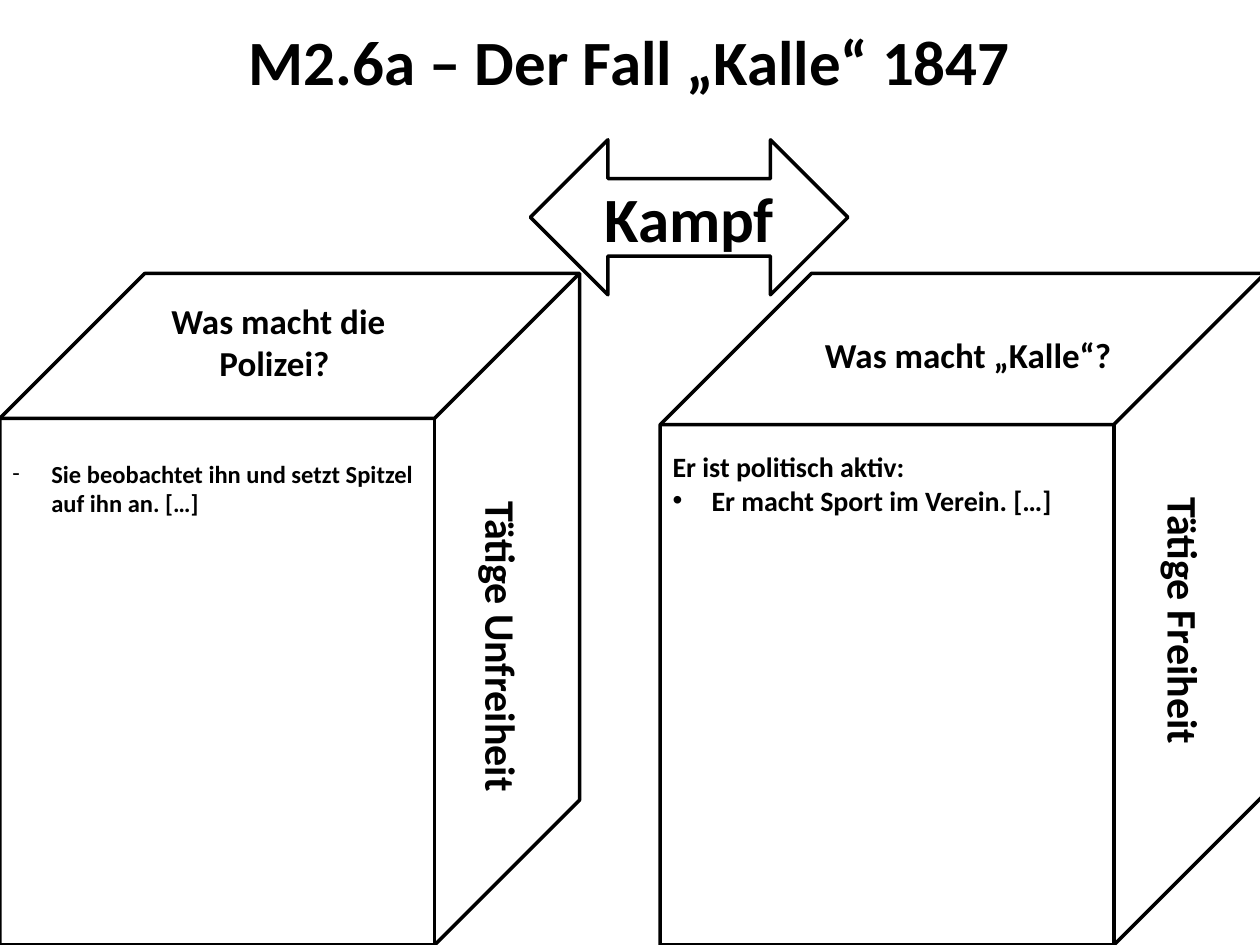
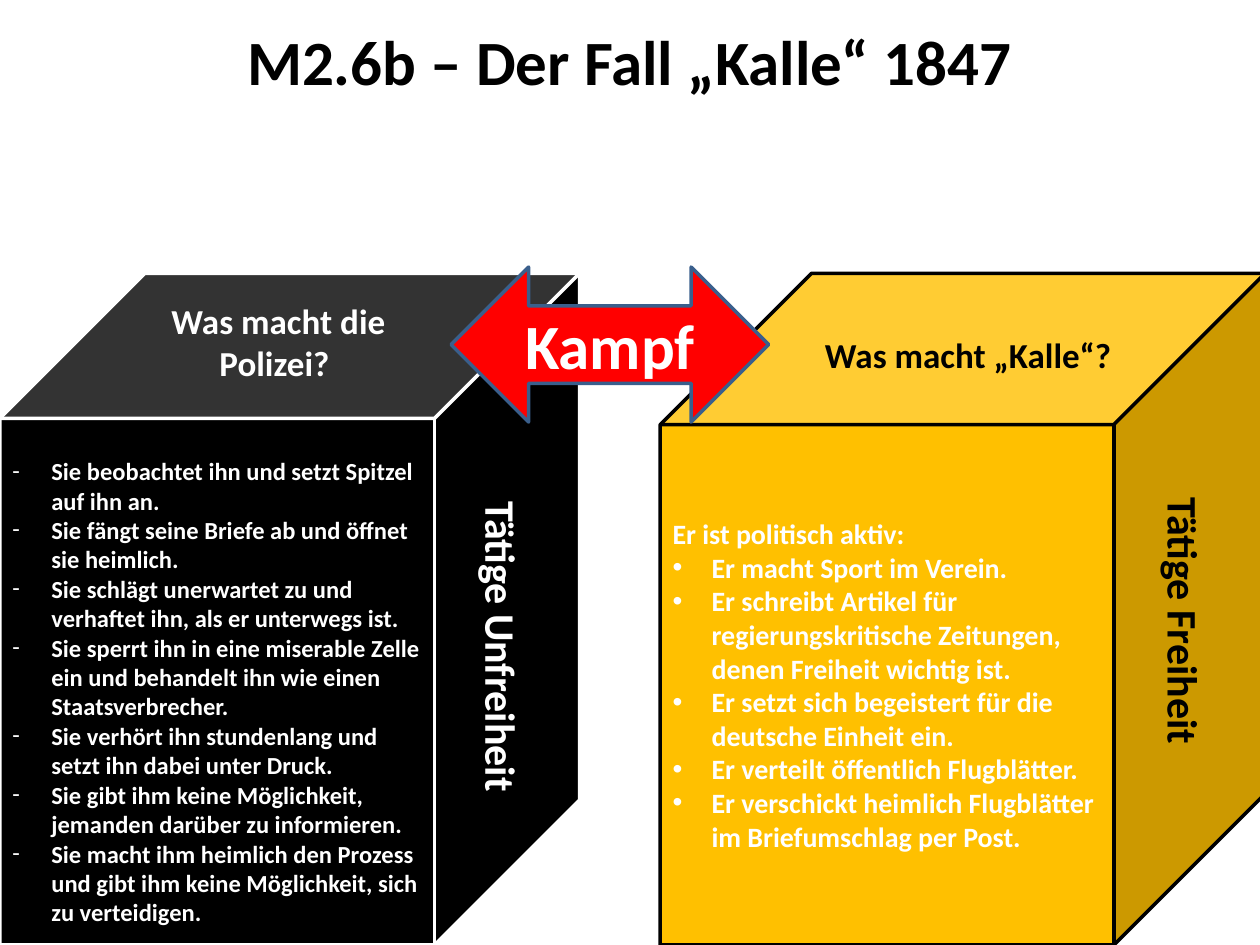
from dataclasses import dataclass
from typing import Optional

from lxml import etree
from pptx import Presentation
from pptx.dml.color import RGBColor
from pptx.enum.shapes import MSO_SHAPE
from pptx.enum.text import MSO_ANCHOR, MSO_AUTO_SIZE, PP_ALIGN
from pptx.oxml.ns import qn
from pptx.util import Inches, Pt

CUBE, ARROW = MSO_SHAPE.CUBE, MSO_SHAPE.LEFT_RIGHT_ARROW
TOP, MIDDLE = MSO_ANCHOR.TOP, MSO_ANCHOR.MIDDLE
LEFT, CENTER = PP_ALIGN.LEFT, PP_ALIGN.CENTER
GROW = MSO_AUTO_SIZE.SHAPE_TO_FIT_TEXT

BLACK = RGBColor(0x00, 0x00, 0x00)
WHITE = RGBColor(0xFF, 0xFF, 0xFF)
GOLD = RGBColor(0xFF, 0xC0, 0x00)
RED = RGBColor(0xFF, 0x00, 0x00)
BLUE = RGBColor(0x3A, 0x5F, 0x8C)

WIDTH, HEIGHT = Inches(10), Inches(7.5)
COL, ROW = WIDTH / 100, HEIGHT / 75
HANG = round(3.1 * COL)
FONT = "Calibri"


@dataclass(frozen=True)
class Box:
    """A place on the grid, in columns and rows."""
    x: float
    y: float
    w: float
    h: float

    def place(self) -> tuple[int, ...]:
        return (round(self.x * COL), round(self.y * ROW),
                round(self.w * COL), round(self.h * ROW))


@dataclass(frozen=True)
class Look:
    ink: RGBColor
    line: RGBColor
    fill: Optional[RGBColor] = None


@dataclass(frozen=True)
class Label:
    box: Box
    text: str
    size: int
    turn: int = 0


@dataclass(frozen=True)
class Block:
    """A cube with a list on its front and labels on its other faces."""
    box: Box
    size: int
    mark: str
    face: str
    labels: tuple[Label, ...]


@dataclass(frozen=True)
class Side:
    """What one slide shows on one block; drop is the gap above the list."""
    look: Look
    ink: RGBColor
    points: tuple[str, ...]
    lead: str = ""
    drop: float = 0.5
    anchor: MSO_ANCHOR = TOP


@dataclass(frozen=True)
class Page:
    title: str
    sides: tuple[Side, Side]
    fight: Box
    look: Look


TITLE = Box(3.5, 1.3, 92.9, 7.1)
POLICE = Block(Box(0, 21.7, 46, 53.3), 14, "-", FONT, (
    Label(Box(9.1, 23.3, 26, 7.7), "Was macht die Polizei? ", 20),
    Label(Box(25.7, 49.2, 28.3, 5), "Tätige Unfreiheit ", 24, 90)))
KALLE = Block(Box(52.4, 21.7, 48, 53.3), 16, "•", "Arial", (
    Label(Box(61, 26, 32.3, 4.4), "Was macht „Kalle“? ", 20),
    Label(Box(80.6, 46.8, 26.8, 5), "Tätige Freiheit", 24, 90)))
BLOCKS = (POLICE, KALLE)

PLAIN = Look(BLACK, BLACK)
DARK = Look(WHITE, WHITE, BLACK)
BRIGHT = Look(BLACK, BLACK, GOLD)
ALARM = Look(WHITE, BLUE, RED)
LEAD = "Er ist politisch aktiv:"

PAGES = (
    Page("M2.6a – Der Fall „Kalle“ 1847", (
        Side(PLAIN, BLACK, (
            "Sie beobachtet ihn und setzt Spitzel auf ihn an. […]",), drop=3.2),
        Side(PLAIN, BLACK, (
            "Er macht Sport im Verein. […]",), LEAD, drop=2),
    ), Box(42.1, 11.1, 25.2, 12.3), PLAIN),
    Page("M2.6b – Der Fall „Kalle“ 1847", (
        Side(DARK, WHITE, (
            "Sie beobachtet ihn und setzt Spitzel auf ihn an.",
            "Sie fängt seine Briefe ab und öffnet sie heimlich.",
            "Sie schlägt unerwartet zu und verhaftet ihn, als er unterwegs ist.",
            "Sie sperrt ihn in eine miserable Zelle ein und behandelt ihn "
            "wie einen Staatsverbrecher.",
            "Sie verhört ihn stundenlang und setzt ihn dabei unter Druck.",
            "Sie gibt ihm keine Möglichkeit, jemanden darüber zu informieren.",
            "Sie macht ihm heimlich den Prozess und gibt ihm keine "
            "Möglichkeit, sich zu verteidigen."), drop=3),
        Side(BRIGHT, WHITE, (
            "Er macht Sport im Verein.",
            "Er schreibt Artikel für regierungskritische Zeitungen, "
            "denen Freiheit wichtig ist.",
            "Er setzt sich begeistert für die deutsche Einheit ein.",
            "Er verteilt öffentlich Flugblätter.",
            "Er verschickt heimlich Flugblätter im Briefumschlag per Post."),
            LEAD, anchor=MIDDLE),
    ), Box(35.8, 21.2, 25.2, 12.3), ALARM),
)


def apply(target, **values) -> None:
    for name, value in values.items():
        setattr(target, name, value)


def write(para, text: str, size: int, ink: RGBColor, align=CENTER) -> None:
    para.alignment = align
    run = para.add_run()
    run.text = text
    apply(run.font, name=FONT, size=Pt(size), bold=True)
    run.font.color.rgb = ink


def bullet(para, mark: str, face: str) -> None:
    props = para._p.get_or_add_pPr()
    apply_xml = {"marL": HANG, "indent": -HANG}
    for key, value in apply_xml.items():
        props.set(key, str(value))
    etree.SubElement(props, qn("a:buFont")).set("typeface", face)
    etree.SubElement(props, qn("a:buChar")).set("char", mark)


def draw_shape(slide, kind: MSO_SHAPE, box: Box, look: Look):
    shape = slide.shapes.add_shape(kind, *box.place())
    shape.shadow.inherit = False
    if look.fill is None:
        shape.fill.background()
    else:
        shape.fill.solid()
        shape.fill.fore_color.rgb = look.fill
    shape.line.color.rgb = look.line
    shape.line.width = Pt(2)
    return shape


def draw_label(slide, label: Label, ink: RGBColor) -> None:
    shape = slide.shapes.add_textbox(*label.box.place())
    shape.rotation = label.turn
    frame = shape.text_frame
    apply(frame, word_wrap=True, auto_size=GROW)
    write(frame.paragraphs[0], label.text, label.size, ink)


def draw_cube(slide, block: Block, side: Side) -> None:
    frame = draw_shape(slide, CUBE, block.box, side.look).text_frame
    apply(frame, word_wrap=True, vertical_anchor=side.anchor,
          margin_top=round(side.drop * ROW))
    lines = ([side.lead] if side.lead else []) + list(side.points)
    for i, text in enumerate(lines):
        para = frame.add_paragraph() if i else frame.paragraphs[0]
        write(para, text, block.size, side.ink, LEFT)
        if text != side.lead:
            bullet(para, block.mark, block.face)


def draw_fight(slide, box: Box, look: Look) -> None:
    frame = draw_shape(slide, ARROW, box, look).text_frame
    apply(frame, word_wrap=True, vertical_anchor=MIDDLE)
    write(frame.paragraphs[0], "Kampf", 36, look.ink)


def draw_page(slide, page: Page) -> None:
    draw_label(slide, Label(TITLE, page.title, 36), BLACK)
    pairs = list(zip(BLOCKS, page.sides))
    for block, side in pairs:
        draw_cube(slide, block, side)
    draw_fight(slide, page.fight, page.look)
    for block, side in pairs:
        for label in block.labels:
            draw_label(slide, label, side.look.ink)


def main() -> None:
    deck = Presentation()
    apply(deck, slide_width=WIDTH, slide_height=HEIGHT)
    blank = deck.slide_layouts[6]
    for page in PAGES:
        draw_page(deck.slides.add_slide(blank), page)
    deck.save("out.pptx")


if __name__ == "__main__":
    main()
